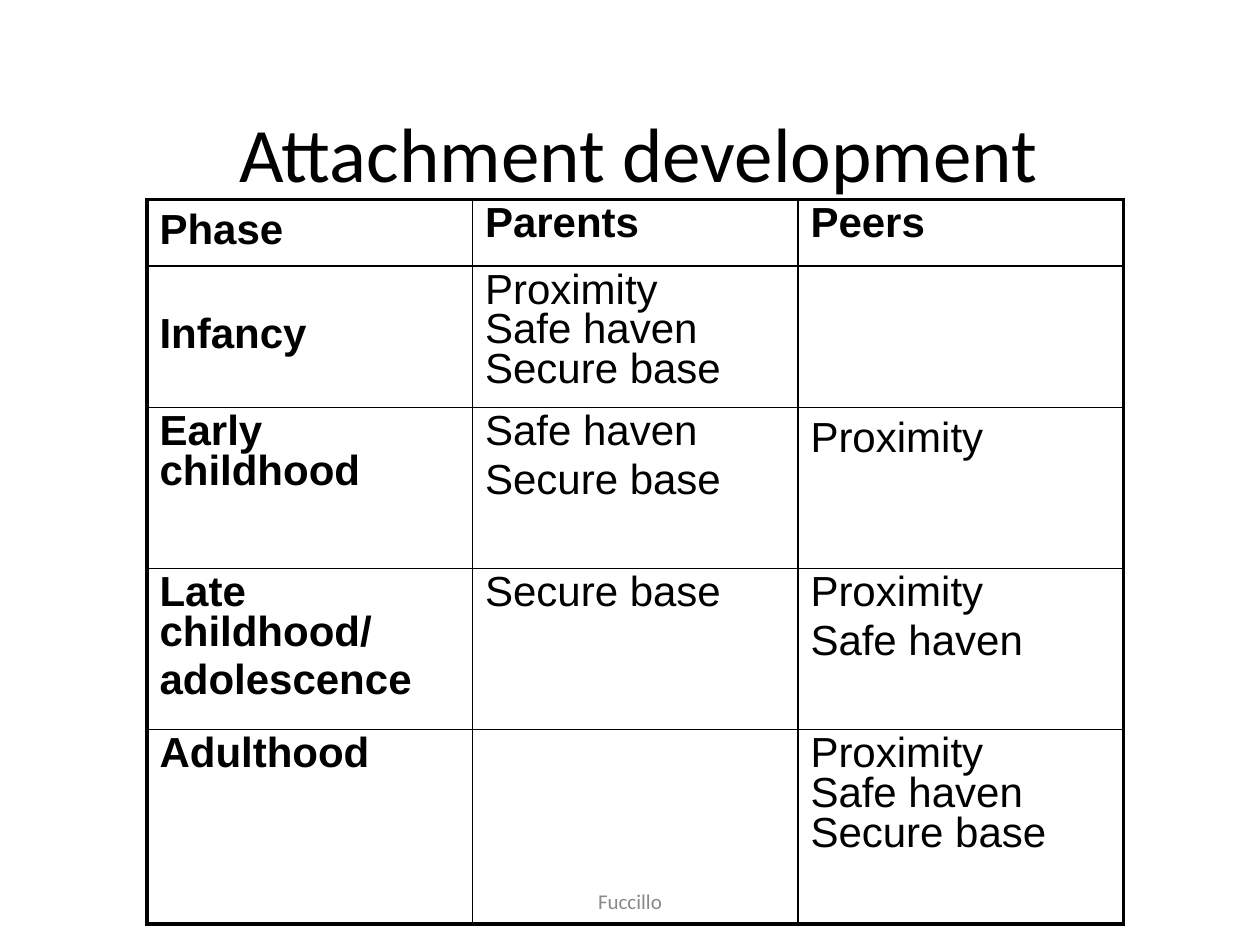
"""Build the attachment development slide with its table of phases."""
from lxml.etree import SubElement
from pptx import Presentation
from pptx.dml.color import RGBColor
from pptx.enum.text import MSO_ANCHOR, PP_ALIGN
from pptx.oxml.ns import qn
from pptx.util import Pt

COLOURS = {"ink": "000000", "footer": "898989"}
OUTER_LINE, INNER_LINE = Pt(2.25), Pt(1)
COLUMN_WIDTH = 186
TABLE_LEFT, TABLE_TOP = 84, 114
TIGHT_LINES, PARAGRAPH_GAP = 0.85, Pt(4.8)

HEADINGS = ["Phase", "Parents", "Peers"]
BONDS = ["Proximity", "Safe haven", "Secure base"]
ROWS = [
    (38, *([heading] for heading in HEADINGS)),
    (81, ["Infancy"], BONDS, []),
    (92, ["Early childhood"], BONDS[1:], BONDS[:1]),
    (92, ["Late childhood/", "adolescence"], BONDS[2:], BONDS[:2]),
    (111, ["Adulthood"], [], BONDS),
]
LAST_ROW, LAST_COLUMN = len(ROWS) - 1, len(HEADINGS) - 1
MIDDLE_CELLS = {(0, 0), (1, 0)}
LOOSE_CELL = (2, 2)


def write_lines(frame, lines, font_format, colour, paragraph_format, gap=Pt(0)):
    for index, line in enumerate(lines):
        paragraph = frame.add_paragraph() if index else frame.paragraphs[0]
        paragraph.space_before = gap if index else Pt(0)
        for name, value in paragraph_format.items():
            setattr(paragraph, name, value)
        run = paragraph.add_run()
        run.text = line
        run.font.color.rgb = RGBColor.from_string(COLOURS[colour])
        for name, value in font_format.items():
            setattr(run.font, name, value)


def add_caption(slide, text, box, size, colour):
    frame = slide.shapes.add_textbox(*map(Pt, box)).text_frame
    frame.word_wrap = True
    frame.vertical_anchor = MSO_ANCHOR.MIDDLE
    font_format = {"name": "Calibri", "size": Pt(size)}
    write_lines(frame, [text], font_format, colour, {"alignment": PP_ALIGN.CENTER})


presentation = Presentation()
presentation.slide_width, presentation.slide_height = Pt(720), Pt(540)
slide = presentation.slides.add_slide(presentation.slide_layouts[6])

add_caption(slide, "Attachment development", (25, 56.5, 680, 60), 44, "ink")

table_width = COLUMN_WIDTH * len(HEADINGS)
table_height = sum(height for height, *_ in ROWS)
phase_table = slide.shapes.add_table(
    len(ROWS), len(HEADINGS),
    Pt(TABLE_LEFT), Pt(TABLE_TOP), Pt(table_width), Pt(table_height),
).table
for name, value in {"first_row": False, "horz_banding": False}.items():
    setattr(phase_table, name, value)
for column in phase_table.columns:
    column.width = Pt(COLUMN_WIDTH)

for row, (height, *entries) in enumerate(ROWS):
    phase_table.rows[row].height = Pt(height)
    for column, lines in enumerate(entries):
        cell = phase_table.cell(row, column)
        in_middle = (row, column) in MIDDLE_CELLS
        cell.vertical_anchor = MSO_ANCHOR.MIDDLE if in_middle else MSO_ANCHOR.TOP

        on_outer_edge = {
            "a:lnL": column == 0,
            "a:lnR": column == LAST_COLUMN,
            "a:lnT": row == 0,
            "a:lnB": row == LAST_ROW,
        }
        cell_properties = cell._tc.get_or_add_tcPr()
        for side, is_outer in on_outer_edge.items():
            line_width = OUTER_LINE if is_outer else INNER_LINE
            border = SubElement(cell_properties, qn(side), w=str(line_width))
            border_fill = SubElement(border, qn("a:solidFill"))
            SubElement(border_fill, qn("a:srgbClr"), val=COLOURS["ink"])
        cell.fill.background()

        is_label = row == 0 or column == 0
        font_format = {"name": "Arial", "size": Pt(24), "bold": is_label}
        line_spacing = 1.0 if (row, column) == LOOSE_CELL else TIGHT_LINES
        gap = Pt(0) if lines == BONDS else PARAGRAPH_GAP
        write_lines(cell.text_frame, lines, font_format, "ink",
                    {"line_spacing": line_spacing}, gap)

add_caption(slide, "Fuccillo", (246, 500.5, 228, 28.75), 12, "footer")

presentation.save("out.pptx")
